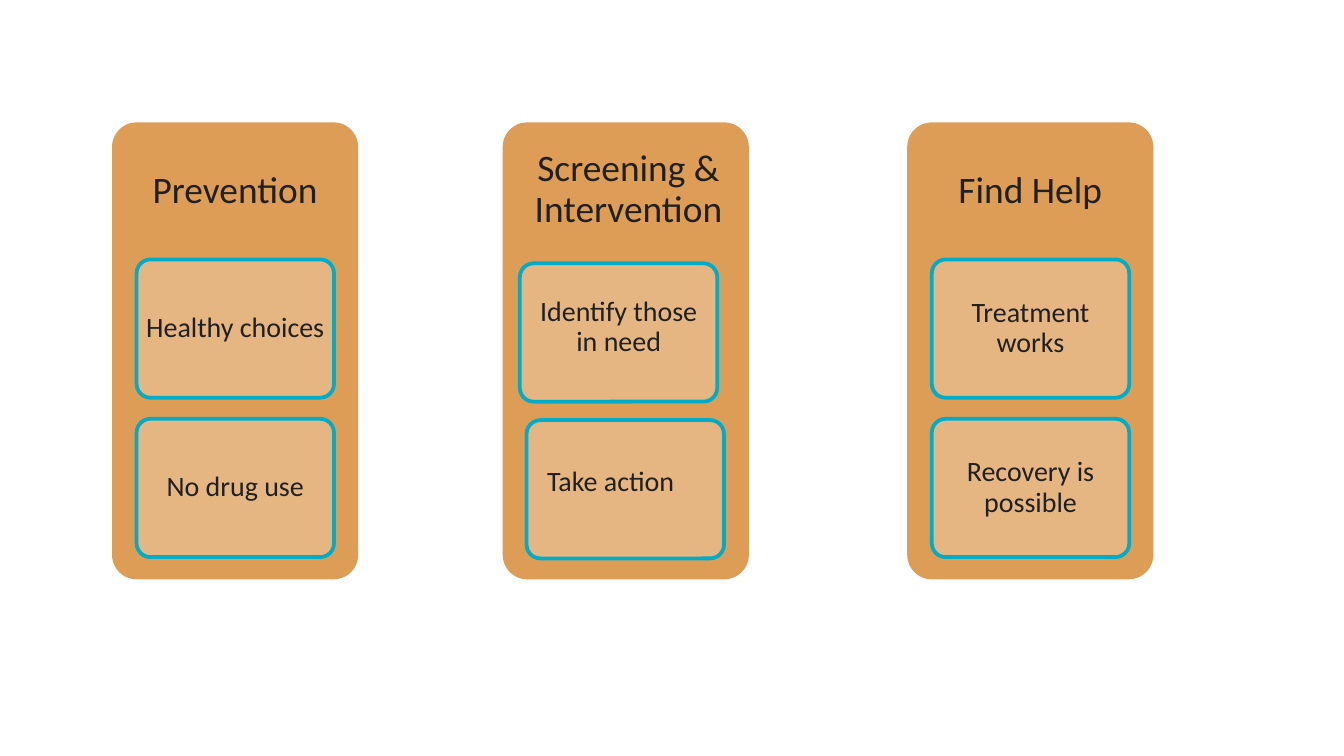
from dataclasses import dataclass

from pptx import Presentation
from pptx.dml.color import RGBColor
from pptx.enum.shapes import MSO_SHAPE as Shape
from pptx.enum.text import MSO_ANCHOR as Anchor, PP_ALIGN as Align
from pptx.slide import Slide
from pptx.util import Pt


@dataclass(frozen=True)
class Theme:
    column_fill: RGBColor = RGBColor(0xDD, 0x9D, 0x56)
    card_fill: RGBColor = RGBColor(0xE6, 0xB6, 0x82)
    card_line: RGBColor = RGBColor(0x00, 0xAC, 0xC8)
    text: RGBColor = RGBColor(0x20, 0x20, 0x20)
    font: str = "Calibri"
    title_size: float = 20
    card_size: float = 15


@dataclass(frozen=True)
class Box:
    left: float
    top: float
    width: float
    height: float

    def shifted(self, offset: tuple[float, float]) -> "Box":
        return Box(self.left + offset[0], self.top + offset[1], self.width, self.height)

    def inset(self, margin: float) -> "Box":
        return Box(self.left + margin, self.top + margin,
                   self.width - 2 * margin, self.height - 2 * margin)

    def lengths(self) -> tuple[Pt, Pt, Pt, Pt]:
        return Pt(self.left), Pt(self.top), Pt(self.width), Pt(self.height)


@dataclass(frozen=True)
class Card:
    text: str
    card_shift: tuple[float, float] = (0, 0)
    text_shift: tuple[float, float] = (0, 0)


@dataclass(frozen=True)
class Column:
    left: float
    title: str
    cards: tuple[Card, ...]
    title_shift: tuple[float, float] = (0, 0)


THEME = Theme()
COLUMN_TOP, COLUMN_WIDTH, COLUMN_HEIGHT = 65.6, 131.9, 244.8
TITLE_HEIGHT = 73.44
CARD_INDENT, CARD_WIDTH, CARD_HEIGHT = 13.2, 105.8, 74.1
CARD_TOP, CARD_STEP = 139, 85.4
LABEL_MARGIN = 2.1

COLUMNS = (
    Column(60, "Prevention", (Card("Healthy choices"), Card("No drug use"))),
    Column(269.3, "Screening & Intervention", (
        Card("Identify those in need", (-4, 2.1), (-3.9, -0.7)),
        Card("Take action", (-0.4, 0.7), (-8.2, -2.8)),
    ), (1.4, -0.7)),
    Column(486, "Find Help", (Card("Treatment works"), Card("Recovery is possible"))),
)


def add_panel(slide: Slide, box: Box, fill: RGBColor, line: RGBColor | None = None) -> None:
    shape = slide.shapes.add_shape(Shape.ROUNDED_RECTANGLE, *box.lengths())
    shape.adjustments[0] = 0.1
    shape.shadow.inherit = False
    shape.fill.solid()
    shape.fill.fore_color.rgb = fill
    if line is None:
        shape.line.fill.background()
    else:
        shape.line.color.rgb = line
        shape.line.width = Pt(2)


def add_label(slide: Slide, box: Box, text: str, size: float,
              side_margin: float, end_margin: float) -> None:
    frame = slide.shapes.add_textbox(*box.lengths()).text_frame
    paragraph = frame.paragraphs[0]
    paragraph.text = text
    formats = {
        frame: {"word_wrap": True, "vertical_anchor": Anchor.MIDDLE,
                "margin_left": Pt(side_margin), "margin_right": Pt(side_margin),
                "margin_top": Pt(end_margin), "margin_bottom": Pt(end_margin)},
        paragraph: {"alignment": Align.CENTER, "line_spacing": 0.9},
        paragraph.font: {"name": THEME.font, "size": Pt(size)},
    }
    for target, values in formats.items():
        for name, value in values.items():
            setattr(target, name, value)
    paragraph.font.color.rgb = THEME.text


def add_column(slide: Slide, column: Column) -> None:
    add_panel(slide, Box(column.left, COLUMN_TOP, COLUMN_WIDTH, COLUMN_HEIGHT),
              THEME.column_fill)
    title_box = Box(column.left, COLUMN_TOP, COLUMN_WIDTH, TITLE_HEIGHT)
    add_label(slide, title_box.shifted(column.title_shift), column.title,
              THEME.title_size, 6, 6)
    for index, card in enumerate(column.cards):
        box = Box(column.left + CARD_INDENT, CARD_TOP + index * CARD_STEP,
                  CARD_WIDTH, CARD_HEIGHT)
        add_panel(slide, box.shifted(card.card_shift), THEME.card_fill, THEME.card_line)
        add_label(slide, box.inset(LABEL_MARGIN).shifted(card.text_shift), card.text,
                  THEME.card_size, 2.8, 2.2)


def main() -> None:
    presentation = Presentation()
    presentation.slide_width, presentation.slide_height = Pt(720), Pt(405)
    slide = presentation.slides.add_slide(presentation.slide_layouts[6])
    for column in COLUMNS:
        add_column(slide, column)
    presentation.save("out.pptx")


if __name__ == "__main__":
    main()
